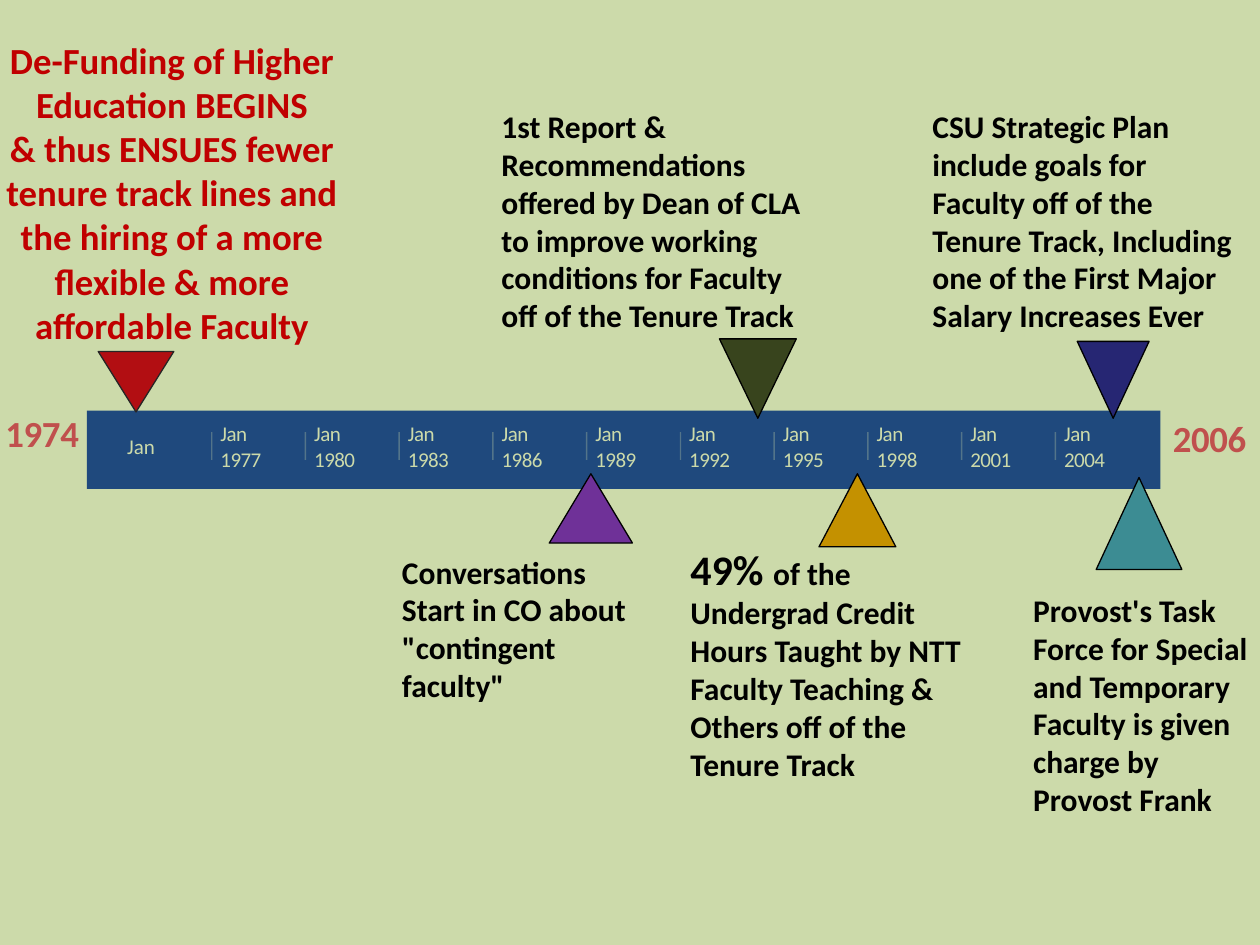
import pptx
import pptx.util
import pptx.dml.color
import pptx.enum.shapes
import pptx.enum.text
import pptx.oxml.ns
import lxml.etree

# Grid of 100 columns by 75 rows
WIDE, HIGH = pptx.util.Inches(10), pptx.util.Inches(7.5)
COLS, ROWS = 100, 75
FONT = "Calibri"
HUES = {
    "ground": "CCDAAA", "bar": "1F497D", "year": "C0504D", "alert": "C00000",
    "black": "000000", "edge": "262626", "red": "B20E12", "olive": "38441D",
    "navy": "262673", "plum": "6F3198", "gold": "C49100", "teal": "3C8C93",
}
ALIGN = pptx.enum.text.PP_ALIGN
SHAPE = pptx.enum.shapes.MSO_SHAPE

# Left, top, width, height, text
NOTES = [
    (39.8, 8.4, 25.5, 18.2, "1st Report & Recommendations offered by Dean of CLA "
     "to improve working conditions for Faculty off of the Tenure Track"),
    (74, 8.4, 23.8, 18.2, "CSU Strategic Plan include goals for Faculty off of the "
     "Tenure Track, Including one of the First Major Salary Increases Ever"),
    (31.9, 43.8, 18.8, 12.1, 'Conversations Start in CO about "contingent faculty"'),
    (82, 46.8, 17.5, 18.2, "Provost's Task Force for Special and Temporary Faculty "
     "is given charge by Provost Frank"),
]
# Left, top, width, height, fill, edge, points down
MARKS = [
    (7.8, 27.9, 6, 4.8, "red", "edge", True),
    (57.1, 26.9, 6.1, 6.3, "olive", "black", True),
    (85.5, 27.1, 5.7, 6.1, "navy", "black", True),
    (43.6, 37.6, 6.6, 5.5, "plum", "black", False),
    (65, 37.6, 6.1, 5.8, "gold", "black", False),
    (87, 37.9, 6.8, 7.3, "teal", "black", False),
]


def col(n):
    return round(WIDE * n / COLS)


def row(n):
    return round(HIGH * n / ROWS)


def place(x, y, w, h):
    return col(x), row(y), col(w), row(h)


def hue(name):
    return pptx.dml.color.RGBColor.from_string(HUES[name])


def style(run, size, tint, bold, gap=0):
    run.font.name = FONT
    run.font.size = pptx.util.Pt(size)
    run.font.bold = bold
    run.font.color.rgb = hue(tint)
    if gap:
        run.font._element.set("spc", str(round(gap * 100)))


def write(slide, box, text, size=18, tint="black", bold=True,
          align=ALIGN.LEFT, gap=0, grow=True):
    frame = slide.shapes.add_textbox(*place(*box)).text_frame
    frame.margin_left = frame.margin_right = 0
    frame.margin_top = frame.margin_bottom = 0
    frame.word_wrap = True
    frame.vertical_anchor = pptx.enum.text.MSO_ANCHOR.MIDDLE
    if grow:
        frame.auto_size = pptx.enum.text.MSO_AUTO_SIZE.SHAPE_TO_FIT_TEXT
    frame.text = text
    for para in frame.paragraphs:
        para.alignment = align
        for run in para.runs:
            style(run, size, tint, bold, gap)
    return frame


def block(slide, kind, box, fill, edge=None):
    shape = slide.shapes.add_shape(kind, *place(*box))
    shape.shadow.inherit = False
    shape.fill.solid()
    shape.fill.fore_color.rgb = hue(fill)
    if edge:
        shape.line.color.rgb = hue(edge)
        shape.line.width = pptx.util.Pt(0.75)
    else:
        shape.line.fill.background()
    return shape


def mark(slide, x, y, w, h, fill, edge, down):
    shape = block(slide, SHAPE.ISOSCELES_TRIANGLE, (x, y, w, h), fill, edge)
    if down:
        shape._element.spPr.xfrm.set("flipV", "1")


def tick(slide, x, top, foot):
    line = slide.shapes.add_connector(
        pptx.enum.shapes.MSO_CONNECTOR.STRAIGHT, col(x), row(top), col(x), row(foot))
    line.line.color.rgb = hue("ground")
    line.line.width = pptx.util.Pt(0.75)
    qn = pptx.oxml.ns.qn
    props = line._element.spPr
    shade = props.find(".//" + qn("a:srgbClr"))
    lxml.etree.SubElement(shade, qn("a:alpha")).set("val", "30000")
    lxml.etree.SubElement(props, qn("a:effectLst"))


def scale(slide):
    # End years, bar, then a tick and date every three years
    for x, y, w, year in [(0, 32.6, 6.7, "1974"), (92, 33, 8, "2006")]:
        write(slide, (x, y, w, 3.5), year, 21, "year", align=ALIGN.CENTER, gap=-0.2)
    block(slide, SHAPE.RECTANGLE, (6.9, 32.6, 85.2, 6.2), "bar")
    write(slide, (10.1, 34.4, 2.4, 2), "Jan", 12, "ground", False, grow=False)
    for i, year in enumerate(range(1977, 2005, 3)):
        x = 16.8 + 7.44 * i
        tick(slide, x, 34.3, 36.5)
        write(slide, (x + 0.7, 34, 3.6, 2.8), f"Jan\v{year}", 12, "ground", False,
              gap=-0.3, grow=False)


def main():
    deck = pptx.Presentation()
    deck.slide_width, deck.slide_height = WIDE, HIGH
    slide = deck.slides.add_slide(deck.slide_layouts[6])
    slide.background.fill.solid()
    slide.background.fill.fore_color.rgb = hue("ground")
    scale(slide)

    # Event notes
    write(slide, (0.5, 2.9, 26.3, 24.7),
          "De-Funding of Higher Education BEGINS\n& thus ENSUES fewer tenure track "
          "lines and the hiring of a more flexible & more affordable Faculty",
          21, "alert", align=ALIGN.CENTER)
    for *box, text in NOTES:
        write(slide, box, text)

    # Note that opens with a larger figure
    share = write(slide, (54.8, 43, 22.3, 19.2), "49% ", 24)
    rest = share.paragraphs[0].add_run()
    rest.text = ("of the Undergrad Credit Hours Taught by NTT Faculty Teaching & "
                 "Others off of the Tenure Track")
    style(rest, 18, "black", True)

    # Event markers
    for item in MARKS:
        mark(slide, *item)
    deck.save("out.pptx")


if __name__ == "__main__":
    main()
